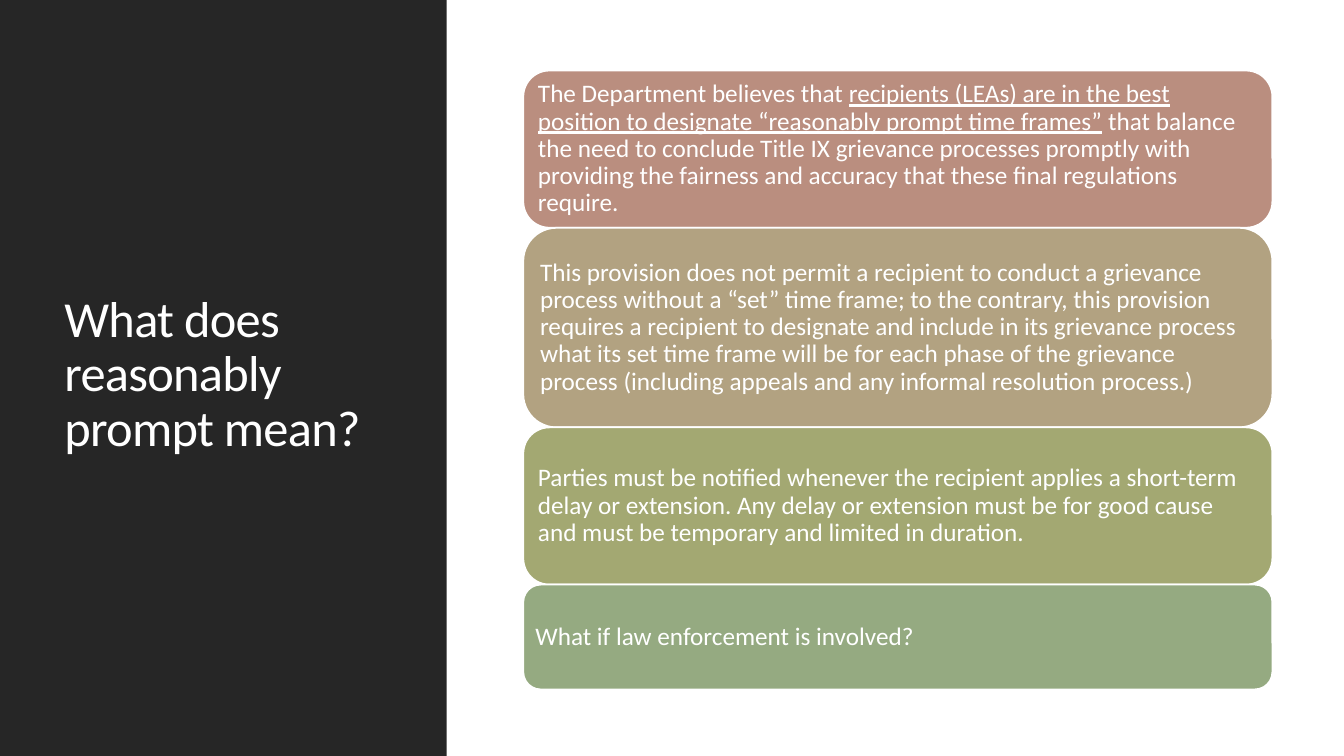
from pptx import Presentation
from pptx.dml.color import RGBColor
from pptx.enum import shapes, text
from pptx.util import Inches, Pt

COLORS = {"panel": "262626", "white": "FFFFFF", "rose": "BA8E7F",
          "sand": "B2A281", "olive": "A3A872", "sage": "95AA81"}
FONT = "Calibri"
TITLE = "What does reasonably prompt mean?"

# Each card: fill, height, runs as (words, underlined)
CARDS = [
    ("rose", 1.56, [
        ("The Department believes that ", False),
        ("recipients (LEAs) are in the best position to designate "
         "“reasonably prompt time frames”", True),
        (" that balance the need to conclude Title IX grievance processes "
         "promptly with providing the fairness and accuracy that these final "
         "regulations require.", False)]),
    ("sand", 1.98, [
        ("This provision does not permit a recipient to conduct a grievance "
         "process without a “set” time frame; to the contrary, this provision "
         "requires a recipient to designate and include in its grievance "
         "process what its set time frame will be for each phase of the "
         "grievance process (including appeals and any informal resolution "
         "process.)", False)]),
    ("olive", 1.56, [
        ("Parties must be notified whenever the recipient applies a short-term "
         "delay or extension. Any delay or extension must be for good cause "
         "and must be temporary and limited in duration.", False)]),
    ("sage", 1.04, [("What if law enforcement is involved?", False)]),
]
CARD_LEFT, CARD_TOP, CARD_WIDTH, CARD_INSET = 5.19, 0.7, 7.43, 0.07


def rgb(name):
    return RGBColor.from_string(COLORS[name])


def add_block(s, kind, box, fill):
    sp = s.shapes.add_shape(kind, *map(Inches, box))
    sp.shadow.inherit = False
    sp.fill.solid()
    sp.fill.fore_color.rgb = rgb(fill)
    sp.line.fill.background()
    return sp


def write(sp, runs, size, inset):
    tf = sp.text_frame
    tf.word_wrap = True
    tf.vertical_anchor = text.MSO_ANCHOR.MIDDLE
    tf.margin_left = tf.margin_right = Inches(inset)
    tf.margin_top = tf.margin_bottom = Inches(min(inset, 0.07))
    p = tf.paragraphs[0]
    p.alignment = text.PP_ALIGN.LEFT
    p.line_spacing = 0.9
    p.font.name, p.font.size = FONT, Pt(size)
    p.font.color.rgb = rgb("white")
    for words, underlined in runs:
        r = p.add_run()
        r.text = words
        if underlined:
            r.font.underline = True
    return p


prs = Presentation()
prs.slide_width, prs.slide_height = Inches(13.33), Inches(7.5)
s = prs.slides.add_slide(prs.slide_layouts[6])

# Dark side panel with the title
add_block(s, shapes.MSO_SHAPE.RECTANGLE, (0, 0, 4.43, 7.5), "panel")
title = s.shapes.add_textbox(*map(Inches, (0.54, 0.57, 3.37, 6.31)))
p = write(title, [(TITLE, False)], 36, 0.1)
p.runs[0].font._element.set("spc", "-50")  # tighter letter spacing

# Stacked cards
top = CARD_TOP
for fill, height, runs in CARDS:
    card = add_block(s, shapes.MSO_SHAPE.ROUNDED_RECTANGLE,
                     (CARD_LEFT, top, CARD_WIDTH, height), fill)
    card.line.color.rgb = rgb("white")
    card.line.width = Pt(1.25)
    write(card, runs, 18, CARD_INSET)
    top += height

prs.save("out.pptx")
